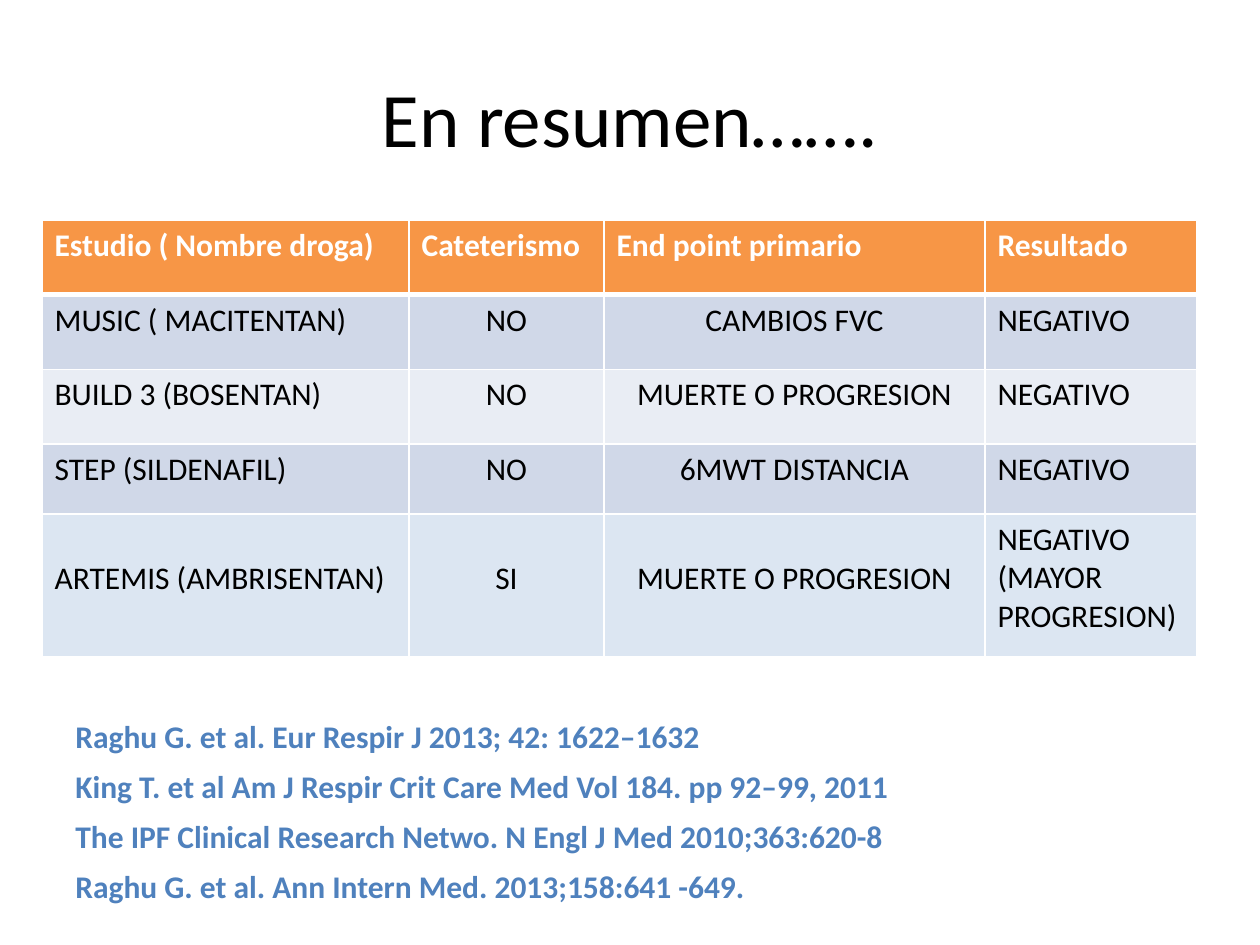
from lxml import etree
from pptx import Presentation
from pptx import util as u
from pptx.dml.color import RGBColor
from pptx.enum import text
from pptx.oxml.ns import qn

PX_PER_INCH = 126
FONT = "Calibri"
COLORS = {
    "black": "000000",
    "white": "FFFFFF",
    "header": "F79646",
    "band_dark": "D0D8E8",
    "band_light": "E9EDF4",
    "highlight": "DCE6F2",
    "reference": "4F81BD",
}
COLUMN_WIDTHS = [367, 195, 381, 212]
CENTERED_COLUMNS = (1, 2)
STUDIES = [
    ["Estudio ( Nombre droga)", "Cateterismo", "End point primario", "Resultado"],
    ["MUSIC ( MACITENTAN)", "NO", "CAMBIOS FVC", "NEGATIVO"],
    ["BUILD 3 (BOSENTAN)", "NO", "MUERTE O PROGRESION", "NEGATIVO"],
    ["STEP (SILDENAFIL)", "NO", "6MWT DISTANCIA", "NEGATIVO"],
]
ARTEMIS = ["ARTEMIS (AMBRISENTAN)", "SI", "MUERTE O PROGRESION",
           "NEGATIVO (MAYOR PROGRESION)"]
REFERENCES = [
    "Raghu G. et al. Eur Respir J 2013; 42: 1622–1632",
    "King T. et al Am J Respir Crit Care Med Vol 184. pp 92–99, 2011",
    "The IPF Clinical Research Netwo. N Engl J Med 2010;363:620-8",
    "Raghu G. et al. Ann Intern Med. 2013;158:641 -649.",
]


def px(length):
    return u.Emu(round(length * 914400 / PX_PER_INCH))


def rgb(name):
    return RGBColor.from_string(COLORS[name])


def format_text(text_frame, size, color, bold=False, align=None):
    for paragraph in text_frame.paragraphs:
        paragraph.alignment = align
        for run in paragraph.runs:
            run.font.name = FONT
            run.font.size = u.Pt(size)
            run.font.bold = bold
            run.font.color.rgb = rgb(color)


def set_borders(cell, bottom_width):
    """Draw white cell borders, with widths in points."""
    properties = cell._tc.get_or_add_tcPr()
    widths = {"a:lnL": 1, "a:lnR": 1, "a:lnT": 1, "a:lnB": bottom_width}
    for position, (tag, width) in enumerate(widths.items()):
        line = etree.Element(qn(tag), w=str(u.Pt(width)))
        fill = etree.SubElement(line, qn("a:solidFill"))
        etree.SubElement(fill, qn("a:srgbClr"), val=COLORS["white"])
        properties.insert(position, line)


def add_title(slide, box):
    title = slide.shapes.title
    title.left, title.top, title.width, title.height = map(px, box)
    title.text_frame.text = "En resumen……."
    title.text_frame.vertical_anchor = text.MSO_ANCHOR.MIDDLE
    format_text(title.text_frame, 44, "black", align=text.PP_ALIGN.CENTER)


def add_study_table(slide, box, rows, fills, has_header):
    frame = slide.shapes.add_table(len(rows), len(COLUMN_WIDTHS), *map(px, box))
    table = frame.table
    table.first_row = has_header
    table.horz_banding = False
    for column, width in zip(table.columns, COLUMN_WIDTHS):
        column.width = px(width)
    for row_index, (values, fill) in enumerate(zip(rows, fills)):
        is_header = has_header and row_index == 0
        for column_index, value in enumerate(values):
            cell = table.cell(row_index, column_index)
            cell.text_frame.text = value
            cell.fill.solid()
            cell.fill.fore_color.rgb = rgb(fill)
            centered = column_index in CENTERED_COLUMNS and not is_header
            format_text(cell.text_frame, 18, "white" if is_header else "black",
                        bold=is_header,
                        align=text.PP_ALIGN.CENTER if centered else None)
            set_borders(cell, 1 if has_header and not is_header else 3)
    return table


def add_artemis_row(slide, box):
    table = add_study_table(slide, box, [ARTEMIS], ["highlight"], False)
    for column_index in range(len(ARTEMIS) - 1):
        table.cell(0, column_index).margin_top = px(45)


def add_references(slide, box):
    left, top, width, height = box
    pitch = height / len(REFERENCES)
    for index, reference in enumerate(REFERENCES):
        text_box = slide.shapes.add_textbox(
            px(left), px(top + index * pitch), px(width), px(pitch))
        text_box.text_frame.word_wrap = True
        text_box.text_frame.text = reference
        format_text(text_box.text_frame, 18, "reference", bold=True)


def main():
    presentation = Presentation()
    presentation.slide_width, presentation.slide_height = px(1260), px(945)
    slide = presentation.slides.add_slide(presentation.slide_layouts[5])
    table_width = sum(COLUMN_WIDTHS)
    add_title(slide, (63, 38, 1134, 157))
    add_study_table(slide, (42, 220, table_width, 299), STUDIES,
                    ["header", "band_dark", "band_light", "band_dark"], True)
    add_artemis_row(slide, (42, 514, table_width, 144))
    add_references(slide, (63, 711, 850, 200))
    presentation.save("out.pptx")


if __name__ == "__main__":
    main()
